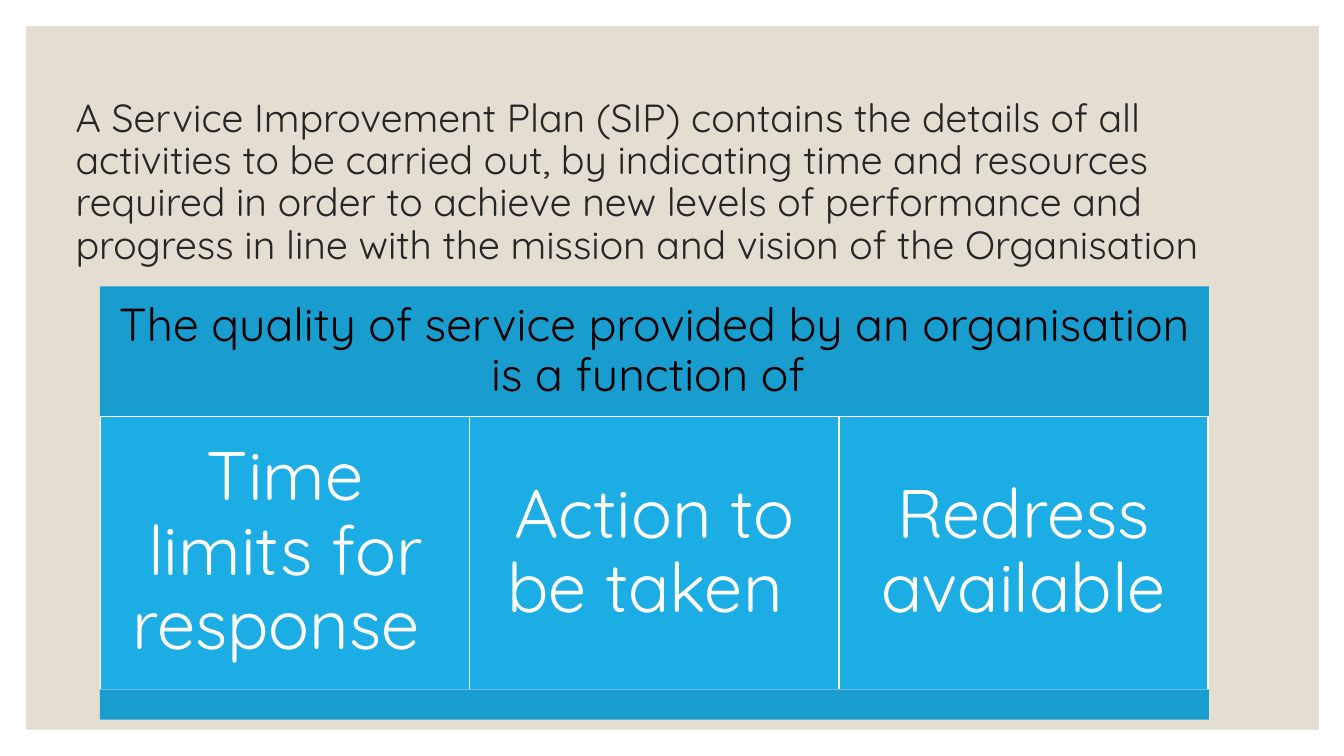
from dataclasses import dataclass

from pptx import Presentation
from pptx.dml.color import RGBColor
from pptx.enum.shapes import MSO_SHAPE
from pptx.enum.text import MSO_ANCHOR, MSO_AUTO_SIZE, PP_ALIGN
from pptx.util import Inches, Pt


@dataclass(frozen=True)
class Theme:
    font: str = "Quicksand"
    panel: str = "E3DED1"
    band: str = "199DCF"
    cell: str = "1CADE4"
    white: str = "FFFFFF"
    black: str = "000000"
    ink: str = "262626"
    title_size: int = 28
    heading_size: int = 33
    cell_size: int = 49


@dataclass(frozen=True)
class Box:
    left: float
    top: float
    width: float
    height: float

    def lengths(self):
        return [Inches(side) for side in (self.left, self.top, self.width, self.height)]


THEME = Theme()
INTRO = (
    "A Service Improvement Plan (SIP) contains the details of all activities "
    "to be carried out, by indicating time and resources required in order to "
    "achieve new levels of performance and progress in line with the mission "
    "and vision of the Organisation"
)
HEADING = "The quality of service provided by an organisation is a function of "
FACTORS = ["Time limits for response ", "Action to be taken ", "Redress available"]


def write_text(shape, text, *, size, color, align=PP_ALIGN.CENTER, inset=0.1):
    frame = shape.text_frame
    frame.word_wrap = True
    frame.auto_size = MSO_AUTO_SIZE.NONE
    frame.vertical_anchor = MSO_ANCHOR.MIDDLE
    frame.margin_left = frame.margin_right = Inches(inset)
    frame.margin_top = frame.margin_bottom = Inches(inset if inset > 0.1 else 0.05)
    para = frame.paragraphs[0]
    para.alignment = align
    para.line_spacing = 0.9
    span = para.add_run()
    span.text = text
    span.font.name = THEME.font
    span.font.size = Pt(size)
    span.font.color.rgb = RGBColor.from_string(color)


def add_block(page, box, fill, line=None):
    block = page.shapes.add_shape(MSO_SHAPE.RECTANGLE, *box.lengths())
    block.shadow.inherit = False
    block.fill.solid()
    block.fill.fore_color.rgb = RGBColor.from_string(fill)
    if line:
        block.line.color.rgb = RGBColor.from_string(line)
        block.line.width = Pt(1)
    else:
        block.line.fill.background()
    return block


def add_title(page, box):
    title = page.shapes.title
    title.left, title.top, title.width, title.height = box.lengths()
    write_text(title, INTRO, size=THEME.title_size, color=THEME.ink, align=PP_ALIGN.LEFT)


def add_panel(page, box):
    panel = add_block(page, box, THEME.panel)
    page.shapes.title.element.addprevious(panel.element)


def add_quality_table(page, box, heading_height=1.29, footer_height=0.3):
    heading = add_block(page, Box(box.left, box.top, box.width, heading_height), THEME.band)
    write_text(heading, HEADING, size=THEME.heading_size, color=THEME.black, inset=0.14)
    cell_top = box.top + heading_height
    cell_height = box.height - heading_height - footer_height
    cell_width = (box.width - 0.02) / len(FACTORS)
    for index, factor in enumerate(FACTORS):
        left = box.left + 0.01 + index * cell_width
        cell_box = Box(left, cell_top, cell_width, cell_height)
        cell = add_block(page, cell_box, THEME.cell, line=THEME.white)
        write_text(cell, factor, size=THEME.cell_size, color=THEME.white, inset=0.2)
    footer = Box(box.left, cell_top + cell_height, box.width, footer_height)
    add_block(page, footer, THEME.band)


def main():
    deck = Presentation()
    deck.slide_width, deck.slide_height = Inches(13.33), Inches(7.5)
    page = deck.slides.add_slide(deck.slide_layouts.get_by_name("Title Only"))
    add_title(page, Box(0.65, 0.85, 12.21, 1.93))
    add_panel(page, Box(0.26, 0.26, 12.82, 6.98))
    add_quality_table(page, Box(0.99, 2.84, 11, 4.3))
    deck.save("out.pptx")


if __name__ == "__main__":
    main()
